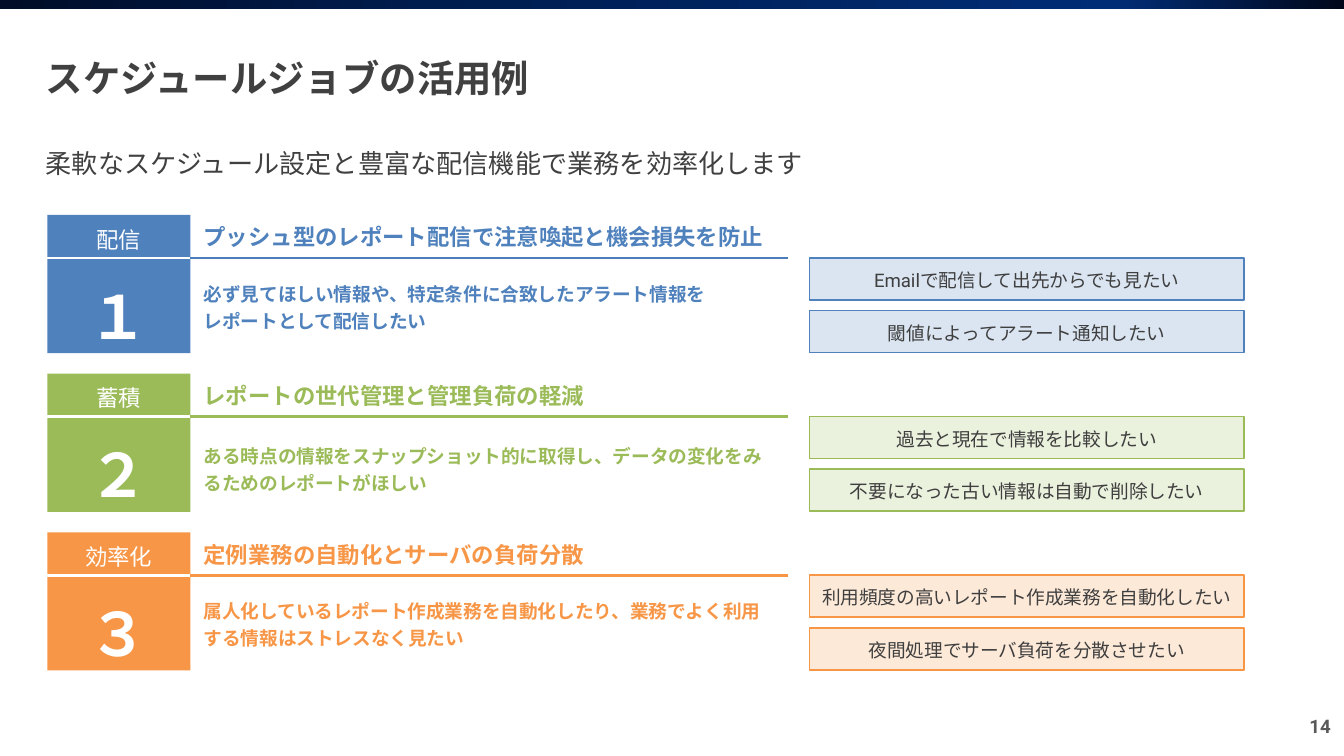
from copy import deepcopy

from lxml.etree import SubElement
from pptx import Presentation
from pptx.dml.color import RGBColor
from pptx.enum.shapes import MSO_CONNECTOR, MSO_SHAPE
from pptx.enum.text import MSO_ANCHOR, MSO_AUTO_SIZE, PP_ALIGN
from pptx.oxml.ns import qn
from pptx.util import Pt

# Colours and font
FONT = "Roboto"
WHITE = RGBColor(0xFF, 0xFF, 0xFF)
DARK = RGBColor(0x40, 0x40, 0x40)
NEED_TEXT = RGBColor(0x3F, 0x3F, 0x3F)
GRAY = RGBColor(0x59, 0x59, 0x59)
BLUE = RGBColor(0x4F, 0x81, 0xBD)
BLUE_RULE = RGBColor(0x4A, 0x7D, 0xBA)
PALE_BLUE = RGBColor(0xDA, 0xE5, 0xF1)
GREEN = RGBColor(0x9B, 0xBB, 0x59)
PALE_GREEN = RGBColor(0xEA, 0xF1, 0xDD)
ORANGE = RGBColor(0xF7, 0x96, 0x46)
PALE_ORANGE = RGBColor(0xFD, 0xE9, 0xD8)
BAR_STOPS = [
    (0, RGBColor(0x00, 0x0D, 0x28)),
    (0.32, RGBColor(0x00, 0x1C, 0x4E)),
    (0.83, RGBColor(0x01, 0x2D, 0x76)),
    (1, RGBColor(0x00, 0x07, 0x1A)),
]

# Content
TITLE = "スケジュールジョブの活用例"
LEAD = "柔軟なスケジュール設定と豊富な配信機能で業務を効率化します"
PAGE_NUMBER = "14"
CASES = [
    dict(
        number="１", label="配信", color=BLUE, rule=BLUE_RULE, pale=PALE_BLUE,
        heading="プッシュ型のレポート配信で注意喚起と機会損失を防止",
        detail="必ず見てほしい情報や、特定条件に合致したアラート情報を\nレポートとして配信したい",
        detail_gap=7.2,
        needs=["Emailで配信して出先からでも見たい", "閾値によってアラート通知したい"],
    ),
    dict(
        number="２", label="蓄積", color=GREEN, rule=GREEN, pale=PALE_GREEN,
        heading="レポートの世代管理と管理負荷の軽減",
        detail="ある時点の情報をスナップショット的に取得し、データの変化をみるためのレポートがほしい",
        detail_gap=9.4,
        needs=["過去と現在で情報を比較したい", "不要になった古い情報は自動で削除したい"],
    ),
    dict(
        number="３", label="効率化", color=ORANGE, rule=ORANGE, pale=PALE_ORANGE,
        heading="定例業務の自動化とサーバの負荷分散",
        detail="属人化しているレポート作成業務を自動化したり、業務でよく利用する情報はストレスなく見たい",
        detail_gap=7.2,
        needs=["利用頻度の高いレポート作成業務を自動化したい", "夜間処理でサーバ負荷を分散させたい"],
    ),
]

# Layout in points
SLIDE_WIDTH, SLIDE_HEIGHT = 720, 405
FIRST_RULE_TOP, CASE_PITCH = 138.2, 85
TAG_LEFT, TAG_WIDTH = 25.4, 76.6
TEXT_LEFT, RULE_RIGHT = TAG_LEFT + TAG_WIDTH, 422.4
LABEL_HEIGHT, NUMBER_HEIGHT = 22.5, 51
NEED_LEFT, NEED_WIDTH, NEED_PITCH = 433.7, 232.6, 28.2


def place(shape, left, top, width, height):
    shape.left, shape.top = Pt(left), Pt(top)
    shape.width, shape.height = Pt(width), Pt(height)


def write(shape, text, size, color, bold=False, align=PP_ALIGN.LEFT,
          spacing=1.0, anchor=MSO_ANCHOR.TOP):
    frame = shape.text_frame
    frame.word_wrap = True
    frame.auto_size = MSO_AUTO_SIZE.NONE
    frame.vertical_anchor = anchor
    paragraph = frame.paragraphs[0]
    paragraph.text = text
    paragraph.alignment = align
    paragraph.line_spacing = spacing
    paragraph.space_before = Pt(0)
    font = paragraph.font
    font.name, font.size, font.bold = FONT, Pt(size), bold
    font.color.rgb = color
    return paragraph


def add_text(slide, box, *args, **options):
    write(slide.shapes.add_textbox(*map(Pt, box)), *args, **options)


def add_box(slide, box, fill, line=None):
    shape = slide.shapes.add_shape(MSO_SHAPE.RECTANGLE, *map(Pt, box))
    shape.shadow.inherit = False
    if fill is not None:
        shape.fill.solid()
        shape.fill.fore_color.rgb = fill
    if line is None:
        shape.line.fill.background()
    else:
        shape.line.color.rgb = line
        shape.line.width = Pt(1)
    return shape


def add_label_box(slide, box, fill, text, size, color, inset, bold=False, line=None):
    shape = add_box(slide, box, fill, line)
    frame = shape.text_frame
    frame.margin_left = frame.margin_right = frame.margin_bottom = 0
    frame.margin_top = Pt(inset)
    write(shape, text, size, color, bold, PP_ALIGN.CENTER)


def add_rule(slide, left, right, top, color):
    rule = slide.shapes.add_connector(
        MSO_CONNECTOR.STRAIGHT, Pt(left), Pt(top), Pt(right), Pt(top))
    rule.line.color.rgb = color
    rule.line.width = Pt(1.5)
    SubElement(rule._element.spPr, qn("a:effectLst"))


def add_top_bar(slide):
    bar = add_box(slide, (0, 0, SLIDE_WIDTH, 5), None)
    bar.fill.gradient()
    bar.fill.gradient_angle = 0
    stop_list = bar._element.spPr.find(qn("a:gradFill")).find(qn("a:gsLst"))
    while len(stop_list) < len(BAR_STOPS):
        stop_list.append(deepcopy(stop_list[0]))
    for stop, (position, color) in zip(bar.fill.gradient_stops, BAR_STOPS):
        stop.position = position
        stop.color.rgb = color


def add_case(slide, case, rule_top):
    color = case["color"]
    # Numbered tag
    add_label_box(slide, (TAG_LEFT, rule_top, TAG_WIDTH, NUMBER_HEIGHT),
                  color, case["number"], 32, WHITE, 11.5, bold=True)
    add_label_box(slide, (TAG_LEFT, rule_top - 23, TAG_WIDTH, LABEL_HEIGHT),
                  color, case["label"], 12, WHITE, 5.8)
    add_rule(slide, TAG_LEFT, TEXT_LEFT, rule_top, WHITE)
    # Heading and detail
    add_text(slide, (TEXT_LEFT, rule_top - 26.5, 326, 26), case["heading"], 12, color,
             bold=True, spacing=1.3, anchor=MSO_ANCHOR.MIDDLE)
    add_text(slide, (TEXT_LEFT, rule_top + case["detail_gap"], 315, 36), case["detail"],
             10, color, bold=True, spacing=1.2, anchor=MSO_ANCHOR.MIDDLE)
    add_rule(slide, TEXT_LEFT, RULE_RIGHT, rule_top, case["rule"])
    # Needs on the right
    for index, need in enumerate(case["needs"]):
        box = (NEED_LEFT, rule_top + index * NEED_PITCH, NEED_WIDTH, LABEL_HEIGHT)
        add_label_box(slide, box, case["pale"], need, 10, NEED_TEXT, 5.8, line=color)


def main():
    presentation = Presentation()
    presentation.slide_width = Pt(SLIDE_WIDTH)
    presentation.slide_height = Pt(SLIDE_HEIGHT)
    slide = presentation.slides.add_slide(presentation.slide_layouts[1])
    add_top_bar(slide)

    # Title and lead sentence
    title, body = slide.placeholders
    place(title, 17.3, 16.6, 686, 50.4)
    write(title, TITLE, 20, DARK, bold=True, anchor=MSO_ANCHOR.MIDDLE)
    place(body, 17.3, 72, 686, 300)
    lead = write(body, LEAD, 14, DARK, spacing=1.2)
    properties = lead._p.get_or_add_pPr()
    properties.set("marL", "0")
    properties.set("indent", "0")
    properties.find(qn("a:defRPr")).addprevious(SubElement(properties, qn("a:buNone")))

    for index, case in enumerate(CASES):
        add_case(slide, case, FIRST_RULE_TOP + index * CASE_PITCH)

    # Page number
    add_text(slide, (676.8, 379.4, 43.2, 21.6), PAGE_NUMBER, 10, GRAY,
             bold=True, align=PP_ALIGN.RIGHT)
    presentation.save("out.pptx")


if __name__ == "__main__":
    main()
